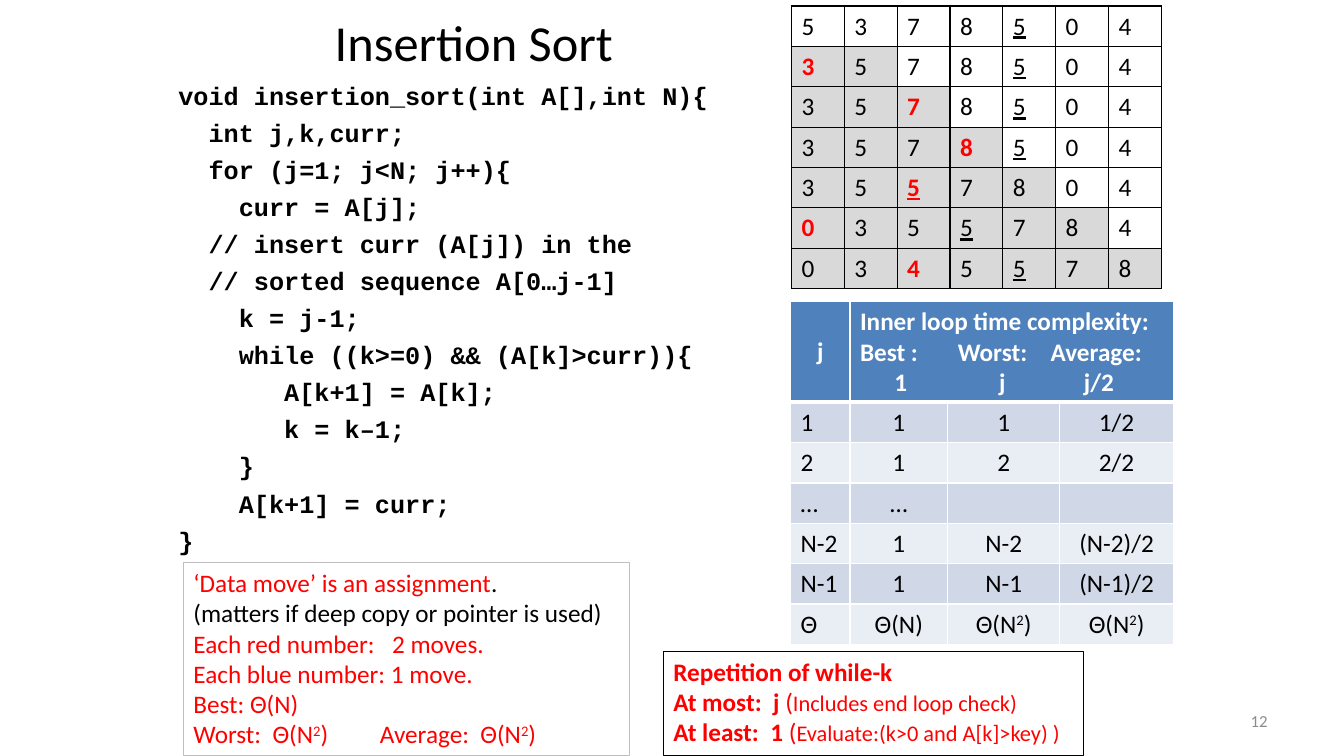
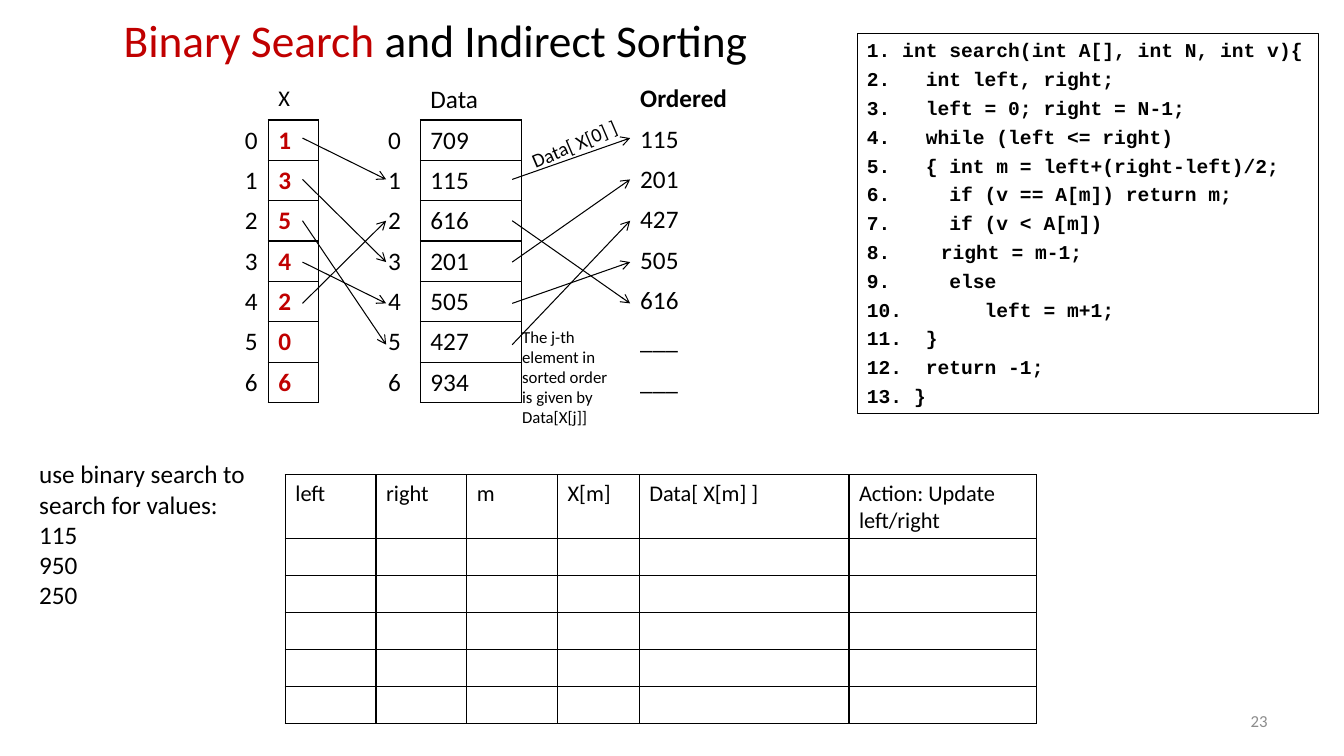
"""Two lecture slides on insertion sort and indirect binary search."""
from lxml import etree
from pptx import Presentation
from pptx import util as u
from pptx.dml.color import RGBColor
from pptx.enum import shapes, text
from pptx.oxml.ns import qn

INK, RED, DEEP, WHITE = "000000", "FF0000", "C00000", "FFFFFF"
BLUE, BAND, PALE, GREY, MUTE = "4F81BD", "D0D8E8", "E9EDF4", "D9D9D9", "8C8C8C"
SANS, MONO = "Calibri", "Courier New"
LEFT, MID, RIGHT = text.PP_ALIGN.LEFT, text.PP_ALIGN.CENTER, text.PP_ALIGN.RIGHT
HALF = text.MSO_ANCHOR.MIDDLE
ALL = dict.fromkeys("LRTB", 1)


def hue(code):
    return RGBColor.from_string(code)


def node(parent, tag, **attrs):
    return etree.SubElement(parent, qn(tag), **attrs)


def place(shape, spot):
    shape.left, shape.top, shape.width, shape.height = map(u.Inches, spot)


class Deck:
    """Holds the shared style and the slide being filled."""

    def __init__(self):
        self.prs = Presentation()
        self.prs.slide_width = u.Inches(13.33)
        self.prs.slide_height = u.Inches(7.5)

    def start(self, title, spot, size, number):
        self.slide = self.prs.slides.add_slide(self.prs.slide_layouts[5])
        head = self.slide.shapes.title
        place(head, spot)
        frame = head.text_frame
        frame.auto_size = text.MSO_AUTO_SIZE.NONE
        frame.vertical_anchor = HALF
        self.lay(frame, [title], size=size, align=MID)
        foot = self.box((9.56, 6.95, 3.11, 0.4), [number], size=12,
                        color=MUTE, align=RIGHT)
        foot.text_frame.vertical_anchor = HALF

    def lay(self, frame, lines, size=18, color=INK, bold=False, face=SANS,
            align=LEFT, gap=0, tabs=None):
        for i, line in enumerate(lines):
            para = frame.paragraphs[0] if i == 0 else frame.add_paragraph()
            stops = (tabs or {}).get(i)
            if stops:
                tray = node(para._p.get_or_add_pPr(), "a:tabLst")
                for stop in stops:
                    node(tray, "a:tab", pos=str(u.Inches(stop)), algn="l")
            para.alignment = align
            para.space_before = u.Pt(gap)
            font = para.font
            font.size, font.bold, font.name = u.Pt(size), bold, face
            font.color.rgb = hue(color)
            if not line:
                node(para._p, "a:endParaRPr", sz=str(size * 100))
                continue
            for part in [line] if isinstance(line, str) else line:
                self.run(para, *([part] if isinstance(part, str) else part))

    def run(self, para, words, look=None):
        run = para.add_run()
        run.text = words
        for key, value in (look or {}).items():
            if key == "color":
                run.font.color.rgb = hue(value)
            elif key == "size":
                run.font.size = u.Pt(value)
            elif key == "bold":
                run.font.bold = value
            elif key == "under":
                run.font.underline = value
            elif key == "up":
                run._r.get_or_add_rPr().set("baseline", str(value * 1000))

    def box(self, spot, lines, edge=None, wrap=True, turn=0, **style):
        box = self.slide.shapes.add_textbox(*map(u.Inches, spot))
        box.rotation = turn
        box.text_frame.word_wrap = wrap
        if edge:
            box.line.color.rgb = hue(edge)
            box.line.width = u.Pt(0.75)
        self.lay(box.text_frame, lines, **style)
        return box

    def code(self, spot, lines, size, edge=None):
        self.box(spot, lines, edge, size=size, bold=True, face=MONO,
                 gap=round(0.27 * size, 2))

    def table(self, left, top, cols, rows, grid, fill=lambda r, c: None,
              edge=lambda r, c: ALL, tint=INK, align=lambda c: LEFT, **style):
        spot = left, top, sum(cols), sum(rows)
        frame = self.slide.shapes.add_table(len(rows), len(cols),
                                            *map(u.Inches, spot))
        table = frame.table
        table.first_row = table.horz_banding = False
        for col, width in zip(table.columns, cols):
            col.width = u.Inches(width)
        for r, height in enumerate(rows):
            table.rows[r].height = u.Inches(height)
            for c, line in enumerate(grid[r]):
                cell = table.cell(r, c)
                self.trim(cell, edge(r, c), tint)
                shade = fill(r, c)
                if shade:
                    cell.fill.solid()
                    cell.fill.fore_color.rgb = hue(shade)
                else:
                    cell.fill.background()
                if line is not None:
                    self.lay(cell.text_frame, [line], align=align(c), **style)
        return table

    def trim(self, cell, edge, tint):
        props = cell._tc.get_or_add_tcPr()
        for side in "LRTB":
            width = u.Pt(edge.get(side, 0))
            line = node(props, "a:ln" + side, w=str(width))
            if width:
                node(node(line, "a:solidFill"), "a:srgbClr", val=tint)
            else:
                node(line, "a:noFill")

    def arrow(self, *ends):
        line = self.slide.shapes.add_connector(
            shapes.MSO_CONNECTOR.STRAIGHT, *map(u.Inches, ends))
        line.line.color.rgb = hue(INK)
        line.line.width = u.Pt(0.75)
        props = line._element.spPr
        node(props.find(qn("a:ln")), "a:tailEnd", type="arrow")
        node(props, "a:effectLst")


def steps(nums, twin):
    """Give the array after each pass, with the moved item in red."""
    grid = []
    for j in range(len(nums)):
        done = sorted(range(j + 1), key=lambda i: nums[i])
        row = []
        for i in done + list(range(j + 1, len(nums))):
            look = {"color": RED, "bold": True} if i == j > 0 else {}
            if i == twin:
                look["under"] = True
            row.append([(str(nums[i]), look)])
        grid.append(row)
    return grid


def insertion(deck):
    deck.start("Insertion Sort", (1.82, 0.08, 5.76, 0.67), 36, "12")
    two = ("2", {"up": 30})
    square = ["Θ(N", two, ")"]
    grid = [[None] * 4,
            ["1", "1", "1", "1/2"],
            ["2", "1", "2", "2/2"],
            ["…", "…", "", ""],
            ["N-2", "1", "N-2", "(N-2)/2"],
            ["N-1", "1", "N-1", "(N-1)/2"],
            ["Θ", "Θ(N)", square, square]]
    costs = deck.table(
        7.84, 2.99, [0.59, 0.97, 1.11, 1.13], [1] + [0.4] * 6, grid,
        fill=lambda r, c: BAND if r % 2 else PALE if r else BLUE,
        edge=lambda r, c: ALL | ({"B": 3} if r == 0 else {"T": 3} if r == 1 else {}),
        tint=WHITE, align=lambda c: MID if c else LEFT)
    costs.cell(0, 1).merge(costs.cell(0, 3))
    costs.cell(0, 0).vertical_anchor = HALF
    deck.lay(costs.cell(0, 0).text_frame, ["j"], color=WHITE, bold=True, align=MID)
    deck.lay(costs.cell(0, 1).text_frame,
             ["Inner loop time complexity:", "Best :\tWorst:\tAverage:", "\t1\tj\tj/2"],
             color=WHITE, bold=True, tabs={1: (0.97, 1.89), 2: (0.34, 1.38, 2.22)})
    thin, small = {"bold": False}, {"bold": False, "size": 16}
    deck.box((6.58, 6.46, 4.17, 1.04),
             ["Repetition of while-k",
              ["At most:  j ", ("(", thin), ("Includes end loop check)", small)],
              ["At least:  1 ", ("(", thin), ("Evaluate:(k>0 and A[k]>key) )", small)]],
             INK, color=RED, bold=True)
    deck.code((1.67, 0.75, 5.71, 4.77), [
        "void insertion_sort(int A[],int N){",
        "  int j,k,curr;",
        "  for (j=1; j<N; j++){",
        "    curr = A[j];",
        "  // insert curr (A[j]) in the",
        "  // sorted sequence A[0…j-1]",
        "    k = j-1;",
        "    while ((k>=0) && (A[k]>curr)){",
        "       A[k+1] = A[k];",
        "       k = k–1;",
        "    }",
        "    A[k+1] = curr;",
        "}"], 18)
    nums = [5, 3, 7, 8, 5, 0, 4]
    count = len(nums)
    deck.table(7.85, 0.06, [3.67 / count] * count, [0.4] * count, steps(nums, 4),
               fill=lambda r, c: GREY if r and c <= r else None)
    black = {"color": INK}
    deck.box((1.82, 5.58, 4.42, 1.92),
             [["‘Data move’ is an assignment", (".", black)],
              [("(matters if deep copy or pointer is used)", black)],
              "Each red number:\t2 moves.",
              "Each blue number: 1 move.",
              "Best: Θ(N)",
              ["Worst:  Θ(N", two, ")\tAverage:  Θ(N", two, ")"]],
             "BFBFBF", color=RED, tabs={2: (1.97,), 5: (1.85,)})


def search(deck):
    deck.start([("Binary Search ", {"color": DEEP}), "and Indirect Sorting"],
               (0.23, 0.1, 8.18, 0.58), 32.4, "23")
    data = [709, 115, 616, 201, 505, 427, 934]
    index = [1, 3, 5, 4, 2, 0, 6]
    rows = [0.4] * 8

    def frame(r, c):
        if r == 0:
            return {"B": 1} if c else {}
        return ALL if c else {"R": 1}

    bold = {"color": DEEP, "bold": True}
    columns = [(3.75, [0.42, 1], "Data", [str(n) for n in data]),
               (2.33, [0.33, 0.5], [("X", {"size": 16})],
                [[(str(n), bold)] for n in index])]
    for left, cols, head, items in columns:
        grid = [["", head]] + [[str(i), item] for i, item in enumerate(items)]
        deck.table(left, 0.79, cols, rows, grid, edge=frame)
    ranks = [str(data[i]) for i in index[:5]] + ["___"] * 2
    deck.table(6.25, 0.78, [1.17], rows,
               [[[("Ordered", {"bold": True})]]] + [[rank] for rank in ranks],
               edge=lambda r, c: {})
    mids = [1.37 + 0.41 * i for i in range(len(data))]
    for i, k in enumerate(index[:5]):
        deck.arrow(3, mids[i], 3.83, mids[k])
        deck.arrow(5.08, mids[k], 6.25, mids[i])
    deck.box((5.15, 1.26, 1.1, 0.34), ["Data[ X[0] ]"], wrap=False, turn=336.8, size=14)
    deck.box((5.08, 3.19, 1.08, 1.11),
             ["The j-th element in sorted order is given by Data[X[j]]"], size=12)
    heads = ["left", "right", "m", "X[m]", "Data[ X[m] ]", "Action: Update left/right"]
    deck.table(2.83, 4.71, [0.9, 0.9, 0.9, 0.81, 2.08, 1.86], [0.63] + [0.33] * 5,
               [heads] + [[""] * len(heads)] * 5, size=16)
    deck.code((8.5, 0.33, 4.58, 3.77), [
        "1. int search(int A[], int N, int v){",
        "2.   int left, right;",
        "3.   left = 0; right = N-1;",
        "4.   while (left <= right)",
        "5.   { int m = left+(right-left)/2;",
        "6.     if (v == A[m]) return m;",
        "7.     if (v < A[m])",
        "8. \t  right = m-1;",
        "9.     else",
        "10.       left = m+1;",
        "11.  }",
        "12.  return -1;",
        "13. }"], 14, INK)
    deck.box((0.29, 4.5, 2.32, 1.62),
             ["use binary search to", "search for values:", "115", "950", "250"],
             wrap=False)


def main():
    deck = Deck()
    insertion(deck)
    search(deck)
    deck.prs.save("out.pptx")


if __name__ == "__main__":
    main()
